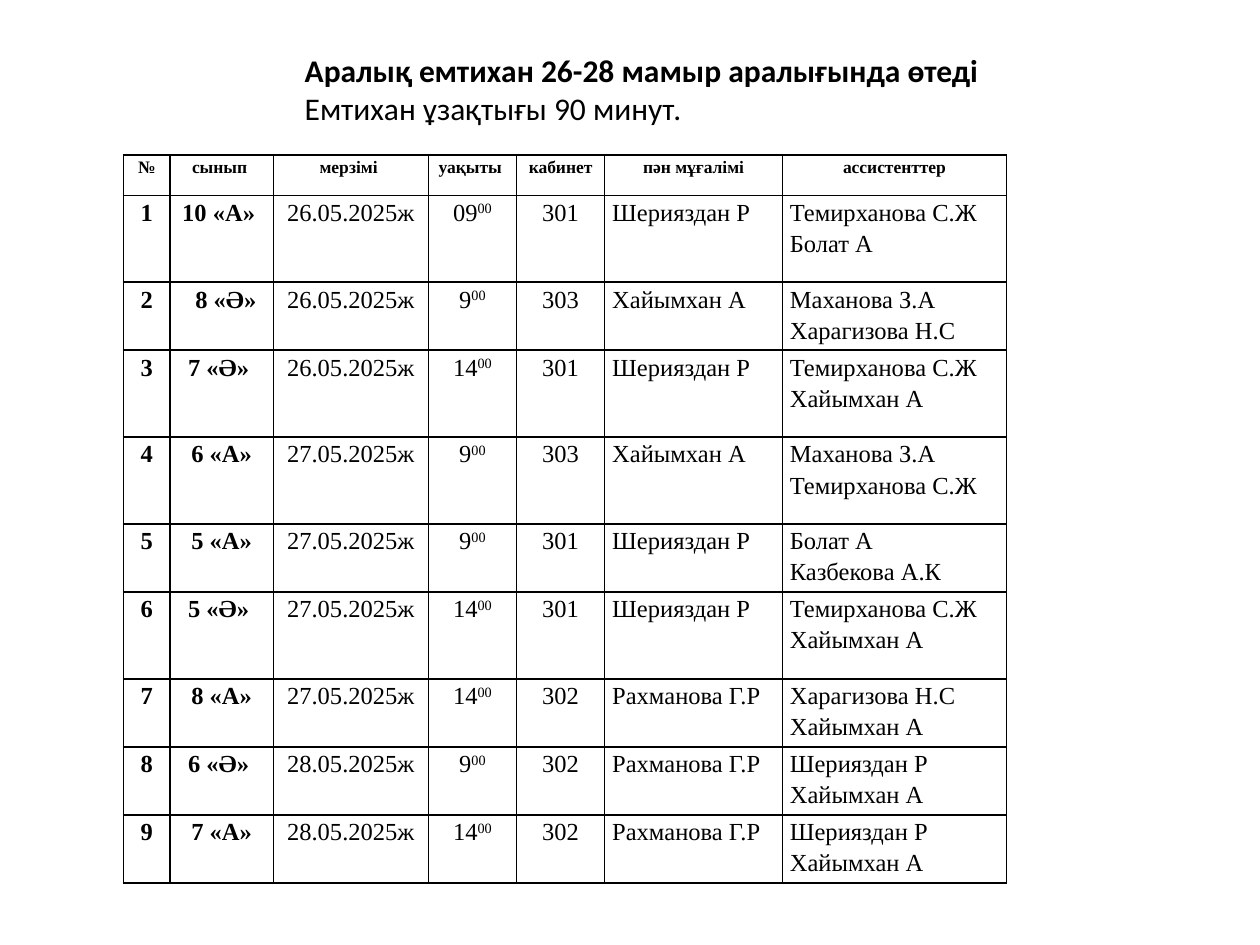
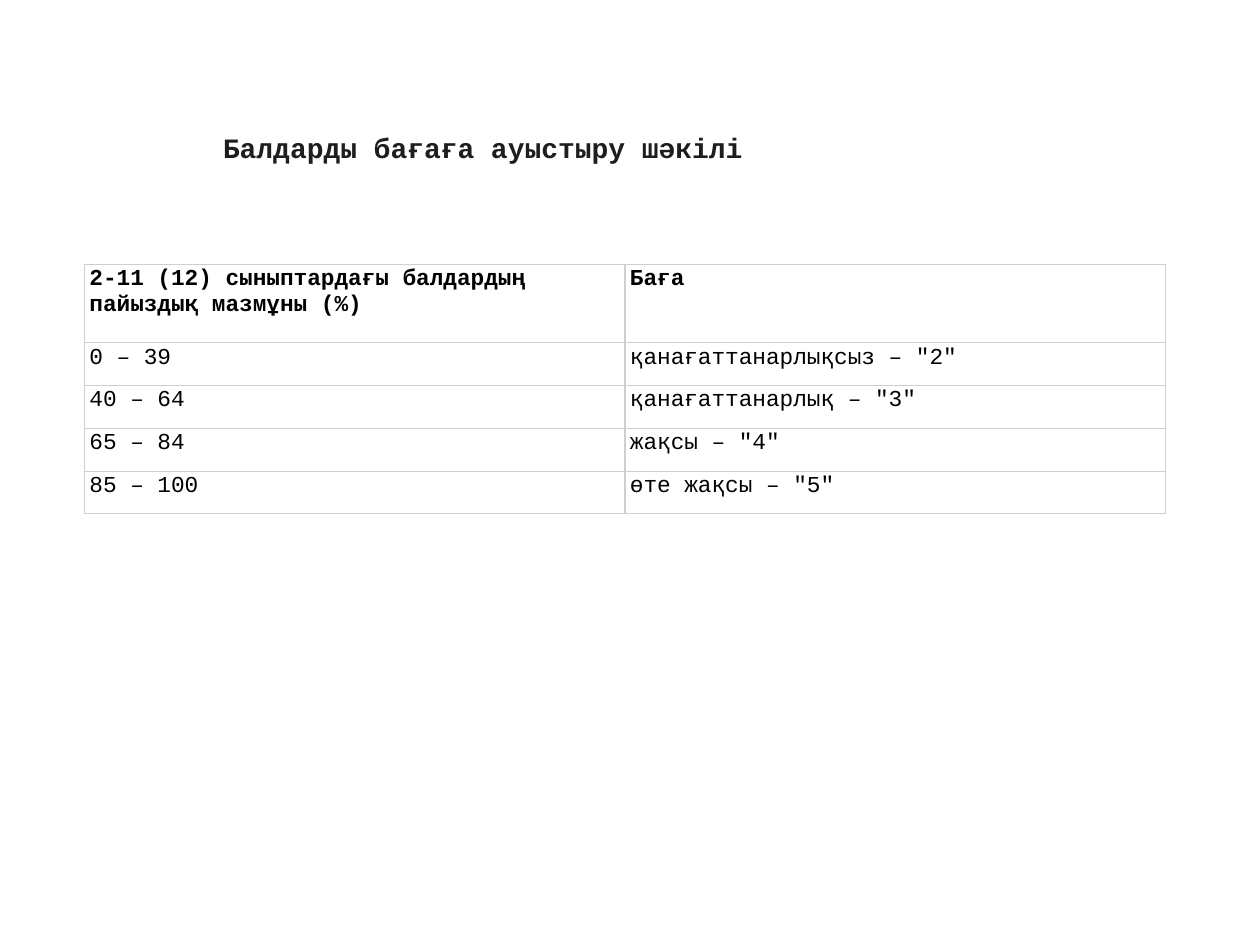
from lxml.etree import SubElement
from pptx import Presentation
from pptx.dml.color import RGBColor as RGB
from pptx.enum.text import PP_ALIGN as Al
from pptx.oxml import parse_xml
from pptx.oxml.ns import nsdecls, qn
from pptx.util import Inches, Pt

BLACK = RGB(0x00, 0x00, 0x00)
WHITE = RGB(0xFF, 0xFF, 0xFF)
INK = RGB(0x1E, 0x1E, 0x1E)
GREY = RGB(0xCF, 0xCF, 0xCF)
SANS, SERIF, MONO = "Calibri", "Times New Roman", "Courier New"

NOTICE = [
    ("Аралық емтихан 26-28 мамыр аралығында өтеді", True),
    ("Емтихан ұзақтығы 90 минут.", False),
]
HEADS = ["№", "сынып ", "мерзімі ", "уақыты ", "кабинет", "пән мұғалімі", "ассистенттер"]
EXAMS = [
    ("10 «А» ", 26, "09", "301", "Шерияздан Р", "Темирханова С.Ж\nБолат А"),
    ("8 «Ә»", 26, "9", "303", "Хайымхан А", "Маханова З.А\nХарагизова Н.С"),
    ("7 «Ә» ", 26, "14", "301", "Шерияздан Р", "Темирханова С.Ж\nХайымхан А"),
    ("6 «А»", 27, "9", "303", "Хайымхан А", "Маханова З.А\nТемирханова С.Ж"),
    ("5 «А»", 27, "9", "301", "Шерияздан Р", "Болат А\nКазбекова А.К"),
    ("5 «Ә» ", 27, "14", "301", "Шерияздан Р", "Темирханова С.Ж\nХайымхан А"),
    ("8 «А»", 27, "14", "302", "Рахманова Г.Р", "Харагизова Н.С\nХайымхан А"),
    ("6 «Ә» ", 28, "9", "302", "Рахманова Г.Р", "Шерияздан Р\nХайымхан А"),
    ("7 «А»", 28, "14", "302", "Рахманова Г.Р", "Шерияздан Р\nХайымхан А"),
]
EXAM_COLS = [0.37, 0.82, 1.23, 0.7, 0.7, 1.41, 1.78]
TALL, LOW = 0.69, 0.54
EXAM_ROWS = [0.32, TALL, LOW, TALL, TALL, LOW, TALL, LOW, LOW, LOW]
INDENT_ROW = 2

SCALE_NAME = "Балдарды бағаға ауыстыру шәкілі"
SCALE = [
    ("2-11 (12) сыныптардағы балдардың пайыздық мазмұны (%)", "Баға"),
    ("0 – 39", 'қанағаттанарлықсыз – "2"'),
    ("40 – 64", 'қанағаттанарлық – "3"'),
    ("65 – 84", 'жақсы – "4"'),
    ("85 – 100", 'өте жақсы – "5"'),
]


def style(par, face, size, bold=False, color=BLACK):
    font = par.font
    font.name, font.size, font.bold = face, Pt(size), bold
    font.color.rgb = color


def write(frame, lines):
    for i, line in enumerate(lines):
        par = frame.paragraphs[0] if i == 0 else frame.add_paragraph()
        base, _, sup = line.partition("^")
        par.add_run().text = base
        if sup:
            run = par.add_run()
            run.text = sup
            run._r.get_or_add_rPr().set("baseline", "30000")
    return frame.paragraphs


def border(cell, color, width):
    props = cell._tc.get_or_add_tcPr()
    for i, side in enumerate(("lnL", "lnR", "lnT", "lnB")):
        line = parse_xml(f'<a:{side} {nsdecls("a")} w="{Pt(width)}"/>')
        fill = SubElement(line, qn("a:solidFill"))
        SubElement(fill, qn("a:srgbClr"), val=str(color))
        props.insert(i, line)


def grid(slide, left, top, cols, rows, data, pad, color, width):
    box = [Inches(n) for n in (left, top, sum(cols), sum(rows))]
    table = slide.shapes.add_table(len(rows), len(cols), *box).table
    table.first_row = table.horz_banding = False
    for col, size in zip(table.columns, cols):
        col.width = Inches(size)
    for row, size in zip(table.rows, rows):
        row.height = Inches(size)
    for r, line in enumerate(data):
        for c, text in enumerate(line):
            cell = table.cell(r, c)
            cell.margin_left = cell.margin_right = Inches(pad[0])
            cell.margin_top = cell.margin_bottom = Inches(pad[1])
            cell.fill.solid()
            cell.fill.fore_color.rgb = WHITE
            border(cell, color, width)
            yield r, c, cell, write(cell.text_frame, text.split("\n"))


def exams(slide):
    frame = slide.shapes.add_textbox(Inches(2.32), Inches(0.36), Inches(5.61), Inches(0.73)).text_frame
    frame.word_wrap = True
    for par, (_, bold) in zip(write(frame, [text for text, _ in NOTICE]), NOTICE):
        style(par, SANS, 18, bold)
    data = [HEADS] + [
        (str(n), name, f"{day}.05.2025ж", f"{hour}^00", *rest)
        for n, (name, day, hour, *rest) in enumerate(EXAMS, 1)
    ]
    for r, c, cell, pars in grid(slide, 0.98, 1.23, EXAM_COLS, EXAM_ROWS, data, (0.06, 0), BLACK, 1):
        shift = (r, c) == (INDENT_ROW, 1)
        if shift:
            cell.margin_left = Inches(0.2)
        for par in pars:
            style(par, SERIF, 14 if r else 10, r == 0 or c < 2)
            par.line_spacing = 1.15
            par.alignment = Al.LEFT if shift or r and c > 4 else Al.CENTER


def scale(slide):
    rows = [0.62] + [0.34] * (len(SCALE) - 1)
    for r, _, _, pars in grid(slide, 0.67, 2.1, [4.29] * 2, rows, SCALE, (0.04, 0.02), GREY, 0.75):
        style(pars[0], MONO, 13, r == 0)
    box = slide.shapes.add_textbox(Inches(1.77), Inches(1.04), Inches(4.18), Inches(0.57))
    box.fill.solid()
    box.fill.fore_color.rgb = WHITE
    frame = box.text_frame
    frame.word_wrap = True
    frame.margin_left = frame.margin_right = frame.margin_top = frame.margin_bottom = 0
    style(write(frame, [SCALE_NAME])[0], MONO, 16, True, INK)


def main():
    deck = Presentation()
    deck.slide_width, deck.slide_height = Inches(10), Inches(7.5)
    for draw in (exams, scale):
        draw(deck.slides.add_slide(deck.slide_layouts[6]))
    deck.save("out.pptx")


if __name__ == "__main__":
    main()
